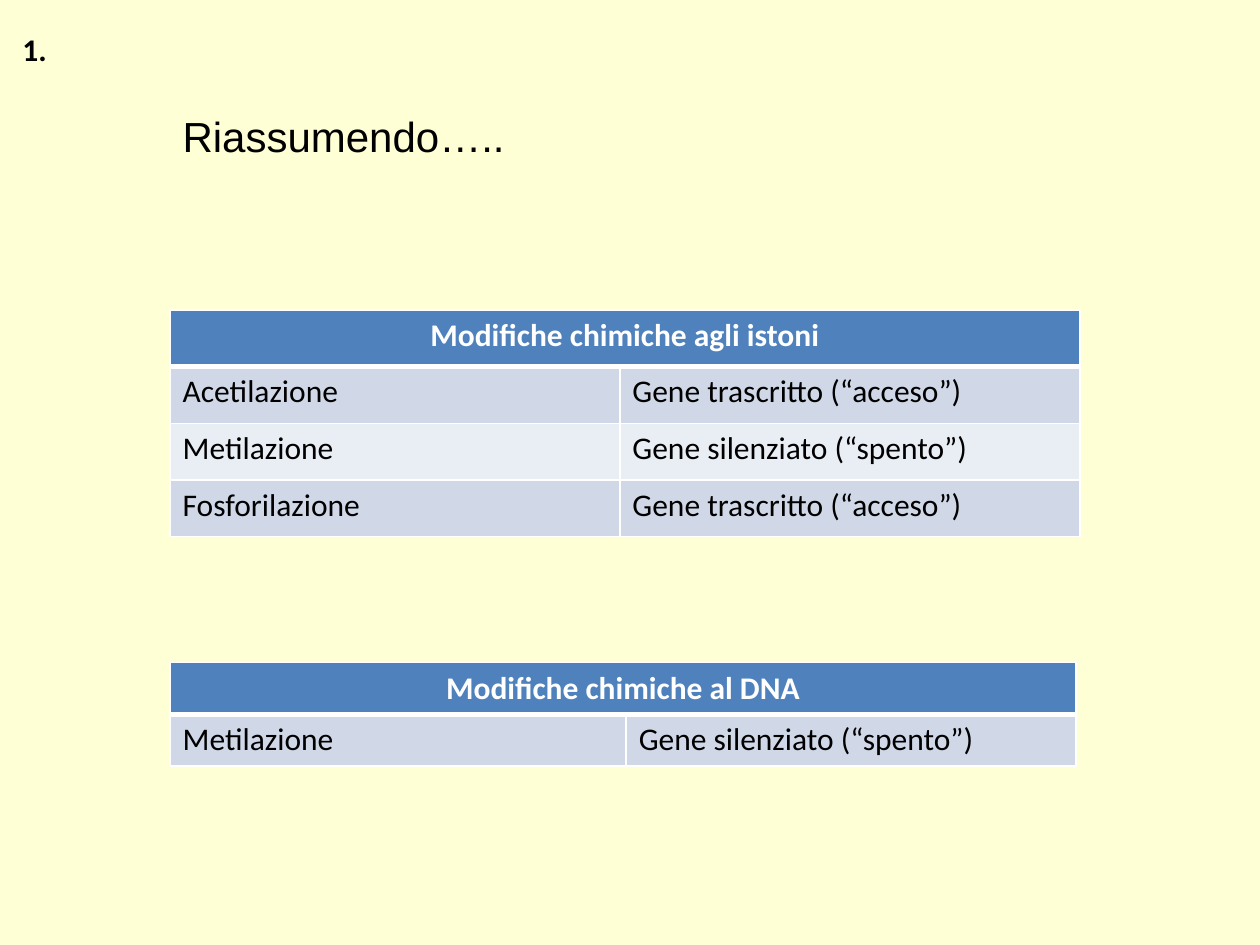
"""Build the summary slide on chemical changes to histones and DNA."""
from lxml.etree import SubElement
from pptx import Presentation
from pptx.dml.color import RGBColor
from pptx.enum.text import MSO_ANCHOR, PP_ALIGN
from pptx.oxml.ns import qn
from pptx.util import Inches, Pt

BACKGROUND = RGBColor(0xFF, 0xFF, 0xD6)
BLACK = RGBColor(0, 0, 0)
WHITE = RGBColor(0xFF, 0xFF, 0xFF)
HEADER = RGBColor(0x4F, 0x81, 0xBD)
BANDS = [RGBColor(0xD0, 0xD8, 0xE8), RGBColor(0xE9, 0xED, 0xF4)]

ACTIVE = "Gene trascritto (“acceso”)"
SILENT = "Gene silenziato (“spento”)"
TABLES = [
    {
        "title": "Modifiche chimiche agli istoni",
        "rows": [("Acetilazione", ACTIVE), ("Metilazione", SILENT), ("Fosforilazione", ACTIVE)],
        "top": 2.46, "columns": (3.57, 3.65), "row_height": 0.45,
    },
    {
        "title": "Modifiche chimiche al DNA",
        "rows": [("Metilazione", SILENT)],
        "top": 5.26, "columns": (3.62, 3.57), "row_height": 0.41,
    },
]
LEFT = 1.35


def style_text(frame, font, size, color, bold=False):
    for para in frame.paragraphs:
        for span in para.runs:
            span.font.name = font
            span.font.size = Pt(size)
            span.font.bold = bold
            span.font.color.rgb = color


def add_label(page, text, area, font, size, bold=False):
    box = page.shapes.add_textbox(*map(Inches, area))
    frame = box.text_frame
    frame.word_wrap = True
    frame.text = text
    style_text(frame, font, size, BLACK, bold)
    return frame


def style_cell(cell, fill, color, bold, top_width, bottom_width):
    style_text(cell.text_frame, "Calibri", 18, color, bold)
    properties = cell._tc.get_or_add_tcPr()
    for side, width in (("L", 1), ("R", 1), ("T", top_width), ("B", bottom_width)):
        line = SubElement(properties, qn(f"a:ln{side}"), w=str(Pt(width)))
        SubElement(SubElement(line, qn("a:solidFill")), qn("a:srgbClr"), val=str(WHITE))
    cell.fill.solid()
    cell.fill.fore_color.rgb = fill


def add_summary_table(page, title, rows, top, columns, row_height):
    count = len(rows) + 1
    table = page.shapes.add_table(
        count, len(columns), Inches(LEFT), Inches(top),
        Inches(sum(columns)), Inches(row_height * count),
    ).table
    for column, width in zip(table.columns, columns):
        column.width = Inches(width)
    for row in table.rows:
        row.height = Inches(row_height)
    heading = table.cell(0, 0)
    heading.merge(table.cell(0, len(columns) - 1))
    heading.text_frame.text = title
    heading.text_frame.paragraphs[0].alignment = PP_ALIGN.CENTER
    for column in range(len(columns)):
        style_cell(table.cell(0, column), HEADER, WHITE, True, 1, 3)
    for index, texts in enumerate(rows):
        for column, text in enumerate(texts):
            cell = table.cell(index + 1, column)
            cell.text_frame.text = text
            style_cell(cell, BANDS[index % 2], BLACK, False, 1 if index else 3, 1)


def main():
    deck = Presentation()
    deck.slide_width, deck.slide_height = Inches(10), Inches(7.5)
    page = deck.slides.add_slide(deck.slide_layouts[6])
    page.background.fill.solid()
    page.background.fill.fore_color.rgb = BACKGROUND

    title = add_label(page, "Riassumendo…..", (LEFT, 1.02, 3.22, 0.89), "Arial", 24)
    title.vertical_anchor = MSO_ANCHOR.MIDDLE
    title.margin_bottom = Inches(0.82)
    add_label(page, "1.", (0.08, 0.19, 0.56, 0.4), "Calibri", 18, True)
    for content in TABLES:
        add_summary_table(page, **content)
    deck.save("out.pptx")


if __name__ == "__main__":
    main()
